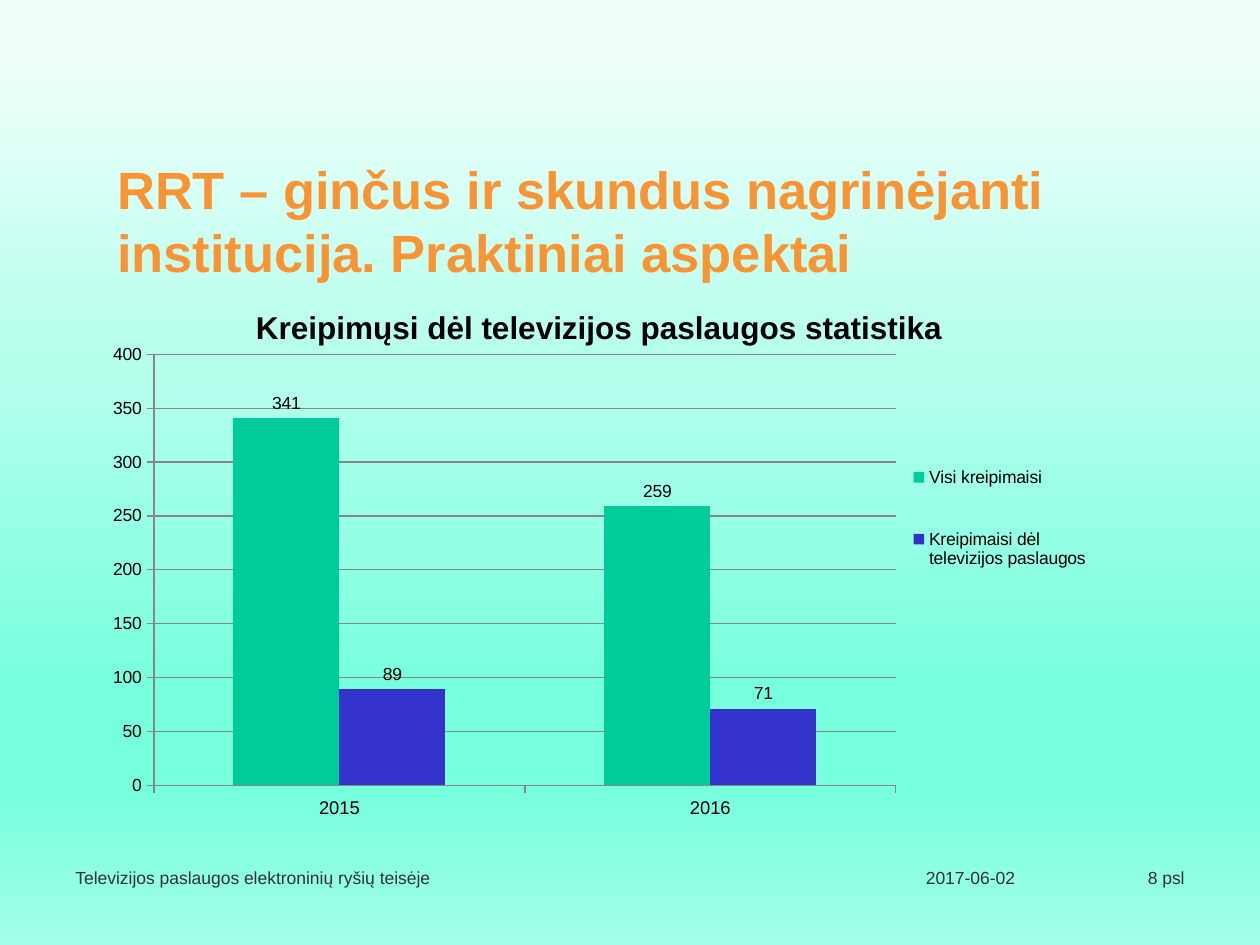
from lxml import etree
from pptx import Presentation
from pptx.chart.data import CategoryChartData
from pptx.dml.color import RGBColor
from pptx.enum.chart import XL_CHART_TYPE, XL_LABEL_POSITION, XL_LEGEND_POSITION, XL_TICK_MARK
from pptx.enum.text import MSO_ANCHOR, PP_ALIGN
from pptx.oxml import parse_xml
from pptx.oxml.ns import nsdecls, qn
from pptx.util import Inches, Pt


def write(frame, text, size=10, color="323232", bold=False, align=PP_ALIGN.LEFT):
    frame.word_wrap = True
    paragraph = frame.paragraphs[0]
    paragraph.alignment = align
    run = paragraph.add_run()
    run.text = text
    run.font.name = "Arial"
    run.font.size = Pt(size)
    run.font.bold = bold
    run.font.color.rgb = RGBColor.from_string(color)


def place(part, position, x, y, w, h, inner=False):
    """Give a chart part a manual layout, in fractions of the chart."""
    for old in part.findall(qn("c:layout")):
        part.remove(old)
    target = '<c:layoutTarget val="inner"/>' if inner else ""
    part.insert(position, parse_xml(
        f'<c:layout {nsdecls("c")}><c:manualLayout>{target}'
        '<c:xMode val="edge"/><c:yMode val="edge"/>'
        f'<c:x val="{x}"/><c:y val="{y}"/><c:w val="{w}"/><c:h val="{h}"/>'
        '</c:manualLayout></c:layout>'))


prs = Presentation()
prs.slide_width, prs.slide_height = Inches(10), Inches(7.5)
slide = prs.slides.add_slide(prs.slide_layouts[5])

# Background gradient, top to bottom
background = slide.background.fill
background.gradient()
background.gradient_angle = 270
stops = slide.background._cSld.find(".//" + qn("a:gsLst"))
for old in list(stops):
    stops.remove(old)
for percent, color in [(5, "F0FFFB"), (40, "B3FFEC"), (57, "94FFE5"),
                       (74, "75FFDD"), (83, "75FFDD"), (100, "A3FFE8")]:
    stop = etree.SubElement(stops, qn("a:gs"), pos=str(percent * 1000))
    etree.SubElement(stop, qn("a:srgbClr"), val=color)

# Title
title = slide.shapes.title
title.left, title.top = Inches(0.83), Inches(1.33)
title.width, title.height = Inches(7.83), Inches(0.83)
title.text_frame.vertical_anchor = MSO_ANCHOR.MIDDLE
write(title.text_frame, "RRT – ginčus ir skundus nagrinėjanti institucija. Praktiniai aspektai",
      size=30, color="F89434", bold=True)

# Footer
for text, left, width, align in [
    ("2017-06-02", 7.25, 1.5, PP_ALIGN.LEFT),
    ("Televizijos paslaugos elektroninių ryšių teisėje", 0.5, 3.17, PP_ALIGN.LEFT),
    ("8 psl", 8.83, 0.67, PP_ALIGN.RIGHT),
]:
    footer = slide.shapes.add_textbox(Inches(left), Inches(6.83), Inches(width), Inches(0.25))
    write(footer.text_frame, text, align=align)

# Chart
requests = CategoryChartData()
requests.categories = ["2015", "2016"]
requests.add_series("Visi kreipimaisi", (341, 259))
requests.add_series("Kreipimaisi dėl televizijos paslaugos", (89, 71))
chart = slide.shapes.add_chart(
    XL_CHART_TYPE.COLUMN_CLUSTERED, Inches(0.83), Inches(2.25),
    Inches(7.85), Inches(4.33), requests).chart
chart.font.name = "Arial"
chart.font.size = Pt(10)
chart.font.color.rgb = RGBColor.from_string("000000")
write(chart.chart_title.text_frame, "Kreipimųsi dėl televizijos paslaugos statistika",
      size=18, color="000000", bold=True, align=PP_ALIGN.CENTER)
chart.chart_title.include_in_layout = False

columns = chart.plots[0]
columns.gap_width = 150
columns.overlap = 0
columns.vary_by_categories = False
for series, color in zip(columns.series, ("00CC99", "3333CC")):
    series.format.fill.solid()
    series.format.fill.fore_color.rgb = RGBColor.from_string(color)
    series.invert_if_negative = False
    series.data_labels.show_value = True
    series.data_labels.position = XL_LABEL_POSITION.OUTSIDE_END

years, counts = chart.category_axis, chart.value_axis
years.tick_labels.font.size = Pt(10.5)
counts.minimum_scale, counts.maximum_scale, counts.major_unit = 0, 400, 50
counts.has_major_gridlines = True
for axis in (years, counts):
    axis.major_tick_mark = XL_TICK_MARK.OUTSIDE
    axis.minor_tick_mark = XL_TICK_MARK.NONE
for ruled in (years, counts, counts.major_gridlines):
    ruled.format.line.color.rgb = RGBColor.from_string("868686")
    ruled.format.line.width = Pt(0.75)

chart.has_legend = True
chart.legend.position = XL_LEGEND_POSITION.RIGHT
chart.legend.include_in_layout = False
place(chart.legend._element, 1, 0.81, 0.26, 0.19, 0.34)
place(chart._chartSpace.chart.plotArea, 0, 0.05, 0.13, 0.75, 0.79, inner=True)

prs.save("out.pptx")
